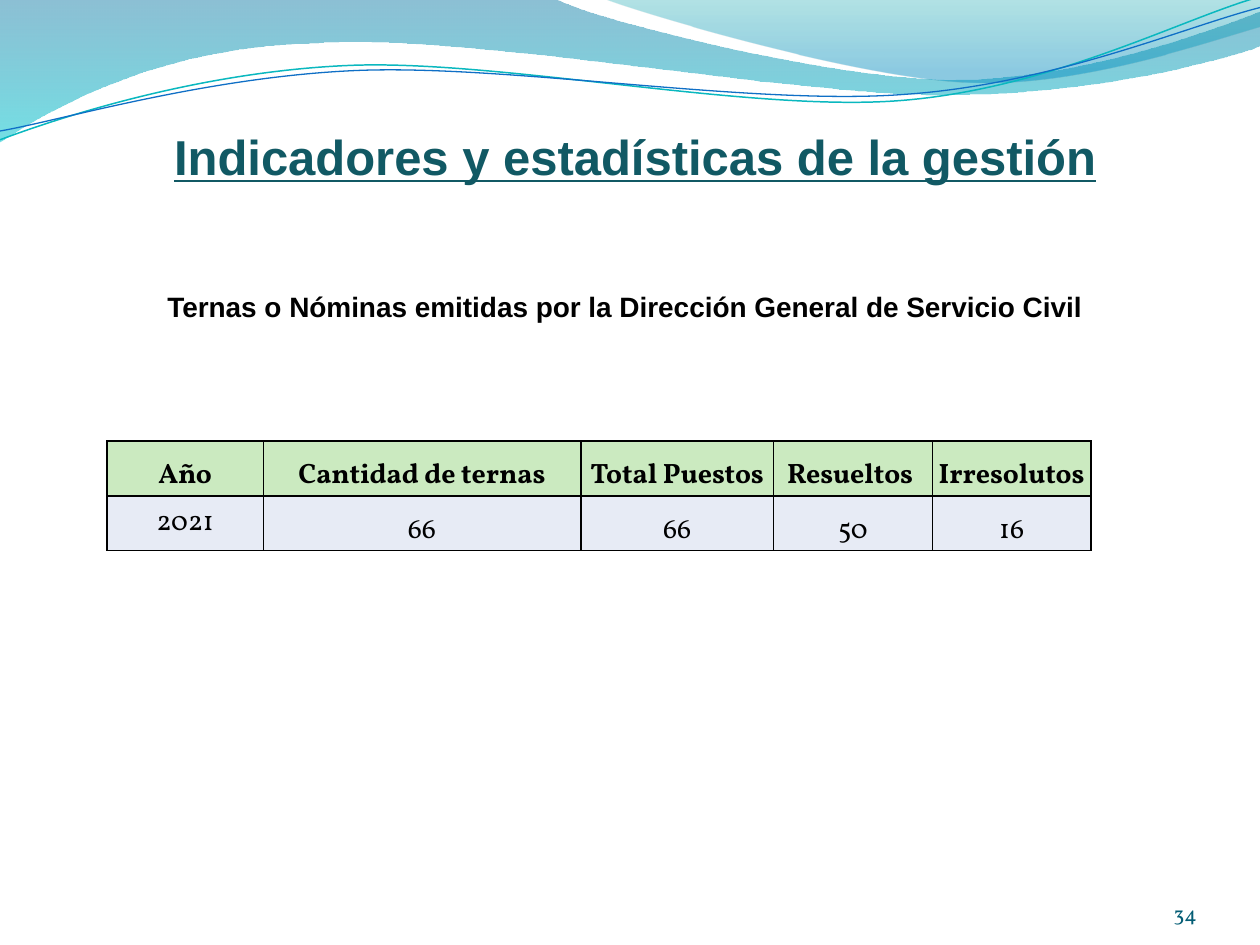
from lxml.etree import SubElement
from pptx import Presentation
from pptx.dml.color import RGBColor
from pptx.enum.shapes import MSO_SHAPE
from pptx.enum.text import MSO_ANCHOR, MSO_AUTO_SIZE, PP_ALIGN
from pptx.oxml.ns import qn
from pptx.util import Inches, Pt

# Content
TITLE = "Indicadores y estadísticas de la gestión\n"
SUBTITLE = "Ternas o Nóminas emitidas por la Dirección General de Servicio Civil"
PAGE_NUMBER = "34"
ROWS = [
    ("Año", "Cantidad de ternas", "Total Puestos", "Resueltos ", "Irresolutos"),
    ("2021", "66", "66", "50", "16"),
]
COLUMN_WIDTHS = (1.24, 2.52, 1.53, 1.26, 1.26)
TABLE_HEIGHT = 0.87
ROW_FILLS = ("CBEAC0", "E7EBF5")

# Waves: a start point, then segments of one point (line) or three (Bézier curve)
FILLED_WAVES = [
    {"start": (0, 0),
     "segments": [[(4.4, -0.01)],
                  [(4.76, 0.17), (6.64, 0.63), (7.58, 0.63)],
                  [(8.53, 0.63), (9.58, 0.26), (10, 0.09)],
                  [(10.01, 0.36)],
                  [(9.83, 0.44), (8.7, 0.76), (7.46, 0.75)],
                  [(6.22, 0.75), (3.82, 0.28), (2.57, 0.34)],
                  [(1.29, 0.36), (0.46, 0.83), (-0.01, 1.13)]],
     "stops": [(0, "0074A1", 45), (1, "00C6CF", 55)]},
    {"start": (4.79, -0.01),
     "segments": [[(5.09, 0.11), (6.82, 0.62), (7.69, 0.65)],
                  [(8.56, 0.69), (9.61, 0.32), (10, 0.21)],
                  [(10, 0)]],
     "stops": [(0, "00A1A9", 30), (0.8, "008BBF", 45)]},
]
LINE_WAVES = [
    {"start": (0, 1.11),
     "segments": [[(0.48, 0.93), (1.58, 0.57), (2.77, 0.52)],
                  [(3.95, 0.47), (5.93, 0.89), (7.13, 0.8)],
                  [(8.33, 0.71), (9.38, 0.15), (9.98, -0.02)]],
     "color": "0AB8BF", "weight": 0.85},
    {"start": (0, 1.04),
     "segments": [[(0.47, 0.96), (1.64, 0.61), (2.83, 0.56)],
                  [(4.03, 0.51), (5.97, 0.84), (7.17, 0.75)],
                  [(8.36, 0.67), (9.41, 0.21), (10, 0.06)]],
     "color": "0F6FC6", "weight": 0.75},
]
UNITS = 100  # freeform units to the inch


def rgb(color):
    return RGBColor.from_string(color)


def add_wave(slide, wave, closed):
    points = [wave["start"]] + [point for segment in wave["segments"] for point in segment]
    points = [(round(x * UNITS), round(y * UNITS)) for x, y in points]
    builder = slide.shapes.build_freeform(*points[0], scale=Inches(1) / UNITS)
    builder.add_line_segments(points[1:], close=closed)
    shape = builder.convert_to_shape()
    shape.shadow.inherit = False

    # Join each three line steps of a curve into one Bézier step
    outline = shape._element.spPr.find(".//" + qn("a:path"))
    steps = iter(outline.findall(qn("a:lnTo")))
    for segment in wave["segments"]:
        parts = [next(steps) for _ in segment]
        if len(parts) == 3:
            curve = SubElement(outline, qn("a:cubicBezTo"))
            parts[0].addprevious(curve)
            for part in parts:
                curve.append(part[0])
                outline.remove(part)
    return shape


def write(text_frame, text, font, size, color, align=PP_ALIGN.CENTER,
          bold=False, underline=False):
    paragraph = text_frame.paragraphs[0]
    paragraph.text = text
    text_frame.word_wrap = True
    paragraph.alignment = align
    run_font = paragraph.runs[0].font
    run_font.name, run_font.size = font, Pt(size)
    run_font.bold, run_font.underline = bold, underline
    run_font.color.rgb = rgb(color)
    # A line break and the line after it take the size of the text
    for line_break in paragraph._p.findall(qn("a:br")):
        for parent, tag in ((line_break, "a:rPr"), (paragraph._p, "a:endParaRPr")):
            properties = SubElement(parent, qn(tag), sz=str(size * 100))
            SubElement(properties, qn("a:latin"), typeface=font)


def set_margins(target, left, top, right, bottom):
    target.margin_left, target.margin_top = Inches(left), Inches(top)
    target.margin_right, target.margin_bottom = Inches(right), Inches(bottom)


def set_borders(cell, color, weight):
    properties = cell._tc.get_or_add_tcPr()
    for position, side in enumerate(("a:lnL", "a:lnR", "a:lnT", "a:lnB")):
        line = SubElement(properties, qn(side), w=str(Pt(weight)))
        properties.insert(position, line)
        SubElement(SubElement(line, qn("a:solidFill")), qn("a:srgbClr"), val=color)


def main():
    presentation = Presentation()
    presentation.slide_width, presentation.slide_height = Inches(10), Inches(7.5)
    slide = presentation.slides.add_slide(presentation.slide_layouts[5])

    # Header waves
    for wave in FILLED_WAVES:
        shape = add_wave(slide, wave, closed=True)
        shape.line.fill.background()
        shape.fill.gradient()
        shape.fill.gradient_angle = 270
        for stop, (position, color, _) in zip(shape.fill.gradient_stops, wave["stops"]):
            stop.position, stop.color.rgb = position, rgb(color)
        colors = shape._element.spPr.findall(".//" + qn("a:gs") + "/" + qn("a:srgbClr"))
        for element, (_, _, opacity) in zip(colors, wave["stops"]):
            SubElement(element, qn("a:alpha"), val=str(opacity * 1000))
    for wave in LINE_WAVES:
        shape = add_wave(slide, wave, closed=False)
        shape.fill.background()
        shape.line.color.rgb = rgb(wave["color"])
        shape.line.width = Pt(wave["weight"])

    # Title
    title = slide.shapes.title
    title.left, title.top = Inches(0.5), Inches(1.23)
    title.width, title.height = Inches(9.08), Inches(0.71)
    write(title.text_frame, TITLE, "Arial", 28, "115964", bold=True, underline=True)
    title.text_frame.auto_size = MSO_AUTO_SIZE.NONE
    title.text_frame.vertical_anchor = MSO_ANCHOR.BOTTOM
    set_margins(title.text_frame, 0, 0.05, 0, 0)

    # Page number
    number = slide.shapes.add_textbox(Inches(8.67), Inches(6.95), Inches(0.83), Inches(0.4))
    write(number.text_frame, PAGE_NUMBER, "Vollkorn", 12, "045D75", PP_ALIGN.RIGHT)
    number.text_frame.vertical_anchor = MSO_ANCHOR.BOTTOM
    set_margins(number.text_frame, 0, 0, 0, 0)

    # Subtitle
    subtitle = slide.shapes.add_shape(MSO_SHAPE.RECTANGLE, Inches(0.59), Inches(2.25),
                                      Inches(8.74), Inches(0.64))
    subtitle.shadow.inherit = False
    subtitle.fill.solid()
    subtitle.fill.fore_color.rgb = rgb("FFFFFF")
    subtitle.line.fill.background()
    write(subtitle.text_frame, SUBTITLE, "Arial", 16, "000000", bold=True)
    subtitle.text_frame.vertical_anchor = MSO_ANCHOR.TOP

    # Table
    table = slide.shapes.add_table(len(ROWS), len(COLUMN_WIDTHS), Inches(0.85), Inches(3.5),
                                   Inches(sum(COLUMN_WIDTHS)), Inches(TABLE_HEIGHT)).table
    for column, width in zip(table.columns, COLUMN_WIDTHS):
        column.width = Inches(width)
    for row_index, values in enumerate(ROWS):
        for column_index, value in enumerate(values):
            cell = table.cell(row_index, column_index)
            write(cell.text_frame, value, "Vollkorn", 16, "000000", bold=row_index == 0)
            is_year = row_index > 0 and column_index == 0
            cell.vertical_anchor = MSO_ANCHOR.MIDDLE if is_year else MSO_ANCHOR.BOTTOM
            set_margins(cell, 0.01, 0.01, 0.01, 0)
            cell.fill.solid()
            cell.fill.fore_color.rgb = rgb(ROW_FILLS[row_index])
            set_borders(cell, "000000", 1)

    presentation.save("out.pptx")


if __name__ == "__main__":
    main()
